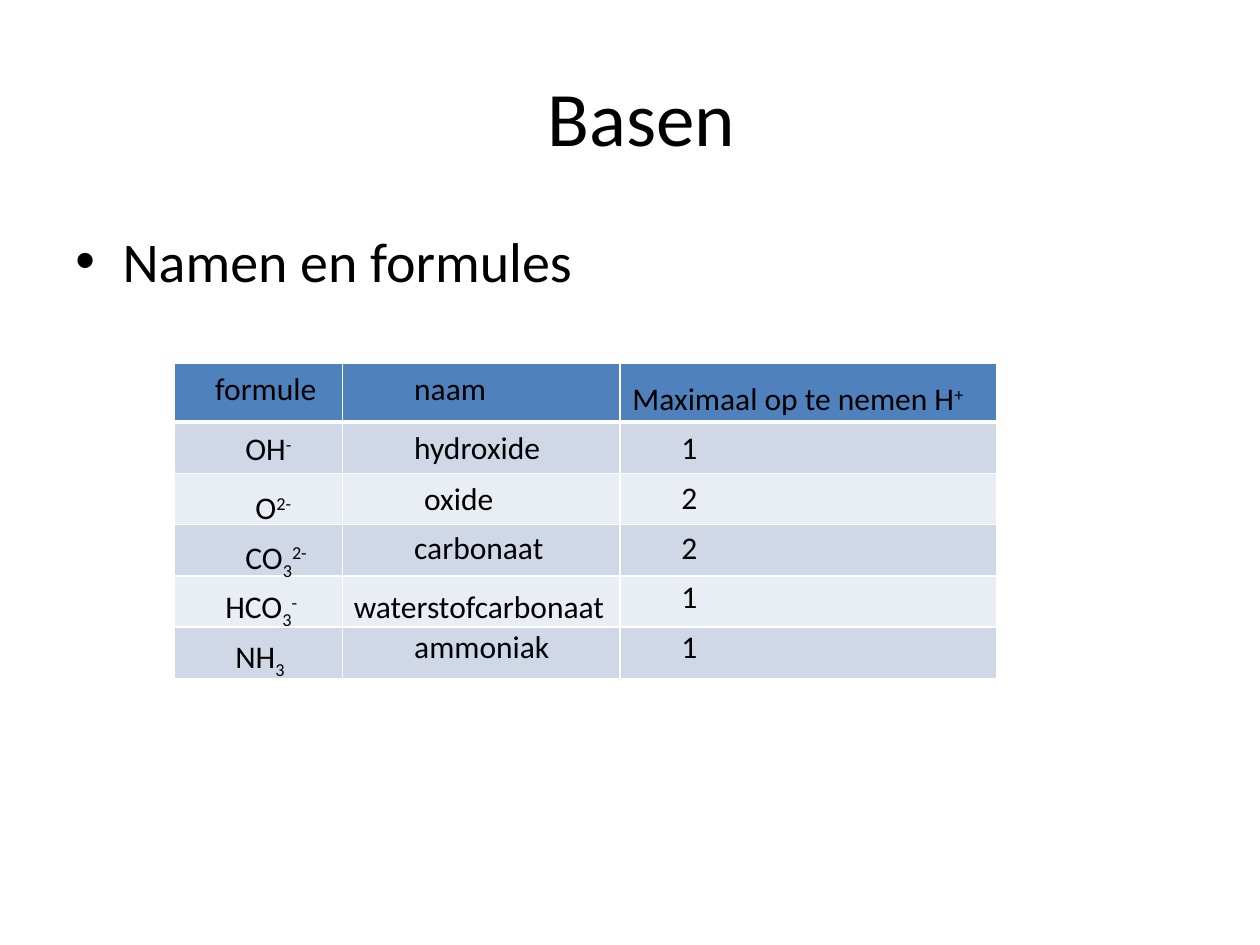
from dataclasses import dataclass

from lxml.etree import SubElement
from pptx import Presentation
from pptx.dml.color import RGBColor
from pptx.enum.text import MSO_ANCHOR, MSO_AUTO_SIZE, PP_ALIGN
from pptx.oxml.ns import qn
from pptx.util import Pt


@dataclass(frozen=True)
class Theme:
    font: str = "Calibri"
    text: str = "000000"
    header: str = "4F81BD"
    bands: tuple = ("D0D8E8", "E9EDF4")
    border: str = "FFFFFF"
    title_size: int = 44
    body_size: int = 32
    label_size: int = 18


THEME = Theme()
SUPER, SUB = 30, -25  # baseline shift in percent

COLUMN_WIDTHS = (96.5, 158.5, 215.5)
HEADER_HEIGHT, ROW_HEIGHT = 33.8, 29.3

# Labels lie on their own grid over the table, nudged in small steps
LABEL_PITCH = 28.4
STEP = 5.75
FORMULA_LEFT, NAME_LEFT, COUNT_LEFT = 16.6, 130.3, 283

# Formula runs, formula steps right and down; name, name steps right and down; count
BASES = (
    ((("OH", 0), ("-", SUPER)), 3, 0.1, "hydroxide", 0, 0, "1"),
    ((("O", 0), ("2-", SUPER)), 4, 1, "oxide", 1, 0.1, "2"),
    ((("CO", 0), ("3", SUB), ("2-", SUPER)), 3, 1, "carbonaat", 0, 0, "2"),
    ((("HCO", 0), ("3", SUB), ("-", SUPER)), 1, 1, "waterstofcarbonaat", -6, 1, "1"),
    ((("NH", 0), ("3", SUB)), 2, 1, "ammoniak", 0, 0, "1"),
)


def add_text(slide, box, runs, size):
    """Add a text box; runs are (text, baseline shift) pairs."""
    frame = slide.shapes.add_textbox(*map(Pt, box)).text_frame
    frame.word_wrap = True
    paragraph = frame.paragraphs[0]
    for text, shift in runs:
        run = paragraph.add_run()
        run.text = text
        run.font.name = THEME.font
        run.font.size = Pt(size)
        run.font.color.rgb = RGBColor.from_string(THEME.text)
        if shift:
            run.font._element.set("baseline", str(shift * 1000))
    return frame


def add_title(slide, box):
    frame = add_text(slide, box, [("Basen", 0)], THEME.title_size)
    frame.vertical_anchor = MSO_ANCHOR.MIDDLE
    frame.paragraphs[0].alignment = PP_ALIGN.CENTER


def add_body(slide, box):
    frame = add_text(slide, box, [("Namen en formules", 0)], THEME.body_size)
    properties = frame.paragraphs[0]._p.get_or_add_pPr()
    properties.set("marL", str(Pt(27)))
    properties.set("indent", str(Pt(-27)))
    SubElement(properties, qn("a:buFont"), typeface="Arial")
    SubElement(properties, qn("a:buChar"), char="•")


def style_cell(cell, fill, edges):
    """Set the borders, given as {side: width}, and then the fill."""
    properties = cell._tc.get_or_add_tcPr()
    for side, width in edges.items():
        line = SubElement(properties, qn(f"a:ln{side}"), w=str(Pt(width)))
        solid = SubElement(line, qn("a:solidFill"))
        SubElement(solid, qn("a:srgbClr"), val=THEME.border)
    cell.fill.solid()
    cell.fill.fore_color.rgb = RGBColor.from_string(fill)


def add_grid(slide, box):
    table = slide.shapes.add_table(
        len(BASES) + 1, len(COLUMN_WIDTHS), *map(Pt, box)).table
    for column, width in zip(table.columns, COLUMN_WIDTHS):
        column.width = Pt(width)
    for index, row in enumerate(table.rows):
        is_header = index == 0
        row.height = Pt(HEADER_HEIGHT if is_header else ROW_HEIGHT)
        fill = THEME.header if is_header else THEME.bands[(index - 1) % 2]
        edges = {"L": 1, "R": 1, "T": 1, "B": 3} if is_header else {"L": 1, "R": 1, "B": 1}
        for cell in row.cells:
            style_cell(cell, fill, edges)


def add_labels(slide, box):
    left, top = box[:2]

    def label(x, y, width, *runs):
        frame = add_text(slide, (left + x, top + y, width, 29), runs, THEME.label_size)
        frame.auto_size = MSO_AUTO_SIZE.SHAPE_TO_FIT_TEXT

    # Header
    label(FORMULA_LEFT, 0, 79, ("formule", 0))
    label(NAME_LEFT, 0, 102, ("naam", 0))
    label(255, STEP, 209.5, ("Maximaal op te nemen H", 0), ("+", SUPER))

    # One row for each base
    for index, (formula, right, down, name, name_right, name_down, count) in enumerate(BASES):
        y = HEADER_HEIGHT + index * LABEL_PITCH
        label(FORMULA_LEFT + right * STEP, y + down * STEP, 90, *formula)
        label(NAME_LEFT + name_right * STEP, y + name_down * STEP, 158.5, (name, 0))
        label(COUNT_LEFT, y, 40, (count, 0))


def main():
    deck = Presentation()
    deck.slide_width, deck.slide_height = Pt(720), Pt(540)
    slide = deck.slides.add_slide(deck.slide_layouts[6])

    add_title(slide, (42.5, 21, 648, 90))
    add_body(slide, (36, 126, 648, 356.5))

    table_box = (99.3, 207.4, sum(COLUMN_WIDTHS), HEADER_HEIGHT + len(BASES) * ROW_HEIGHT)
    add_grid(slide, table_box)
    add_labels(slide, table_box)

    deck.save("out.pptx")


if __name__ == "__main__":
    main()
